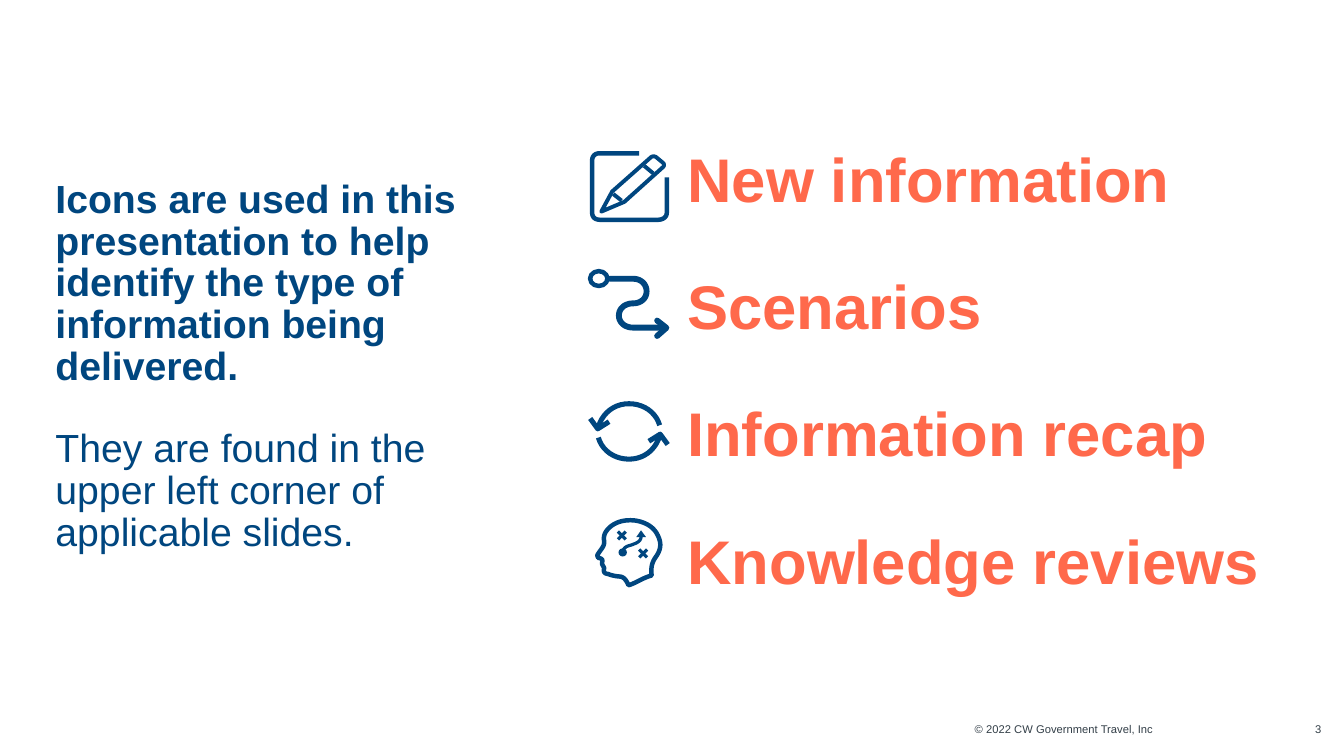
from lxml.etree import SubElement
from pptx import Presentation
from pptx.dml.color import RGBColor as RGB
from pptx.enum.shapes import MSO_SHAPE as SHAPE
from pptx.enum.text import MSO_ANCHOR as ANCHOR, PP_ALIGN as ALIGN
from pptx.oxml.ns import qn
from pptx.util import Pt

COLORS = {"navy": "00467F", "coral": "FF694B", "slate": "333F48"}
FONT = "Arial"
CURVE_STEPS = 10


def flatten(path):
    """Turn points (x, y) and cubic curves (x1, y1, x2, y2, x, y) into points."""
    points = [path[0]]
    for step in path[1:]:
        if len(step) == 2:
            points.append(step)
            continue
        start, controls = points[-1], (step[:2], step[2:4], step[4:])
        for i in range(1, CURVE_STEPS + 1):
            t = i / CURVE_STEPS
            weights = ((1 - t) ** 3, 3 * t * (1 - t) ** 2, 3 * t * t * (1 - t), t ** 3)
            points.append(tuple(
                sum(w * p[axis] for w, p in zip(weights, (start, *controls)))
                for axis in (0, 1)))
    return points


class SlideBuilder:
    def __init__(self, deck):
        self.slide = deck.slides.add_slide(deck.slide_layouts[6])
        self.shapes = self.slide.shapes

    def color(self, name):
        return RGB.from_string(COLORS[name])

    def text(self, box, paragraphs, size, color, anchor=ANCHOR.TOP, **spacing):
        """Each paragraph is (text, bold, space before)."""
        frame = self.shapes.add_textbox(*map(Pt, box)).text_frame
        frame_format = {"word_wrap": True, "vertical_anchor": anchor,
                        "margin_left": 0, "margin_top": 0,
                        "margin_right": 0, "margin_bottom": 0}
        for key, value in frame_format.items():
            setattr(frame, key, value)
        for i, (words, bold, before) in enumerate(paragraphs):
            paragraph = frame.add_paragraph() if i else frame.paragraphs[0]
            for key, value in {**spacing, "space_before": Pt(before)}.items():
                setattr(paragraph, key, value)
            run = paragraph.add_run()
            run.text = words
            for key, value in {"name": FONT, "size": Pt(size), "bold": bold}.items():
                setattr(run.font, key, value)
            run.font.color.rgb = self.color(color)

    def paint(self, shape, width, filled):
        shape.shadow.inherit = False
        if filled:
            shape.fill.solid()
            shape.fill.fore_color.rgb = self.color("navy")
        else:
            shape.fill.background()
        if width:
            shape.line.color.rgb = self.color("navy")
            shape.line.width = Pt(width)
            line = shape.line._get_or_add_ln()
            line.set("cap", "flat" if width < 4 else "rnd")
            SubElement(line, qn("a:round"))
        else:
            shape.line.fill.background()

    def outline(self, path, width=0, closed=False, filled=False):
        points = [(Pt(x), Pt(y)) for x, y in flatten(path)]
        builder = self.shapes.build_freeform(*points[0], scale=1.0)
        builder.add_line_segments(points[1:], close=closed)
        self.paint(builder.convert_to_shape(), width, filled)

    def oval(self, box, width=0, filled=False):
        self.paint(self.shapes.add_shape(SHAPE.OVAL, *map(Pt, box)), width, filled)


def draw_pencil(page):
    frame = [(456.5, 109.5), (428.4, 109.5), (425, 109.5, 423, 111.6, 423, 114.5),
             (423, 152), (423, 155, 425, 157, 428.4, 157), (470.2, 157),
             (473.6, 157, 476.3, 155, 476.3, 152), (476.3, 126.7)]
    pencil = [(429.5, 151.2), (437.3, 136.8), (464.8, 112.5),
              (466.2, 111.4, 467.6, 111.4, 469, 112.5), (473.6, 116.3),
              (474.6, 117.3, 474.6, 118.4, 473.6, 119.4), (446, 144.2)]
    page.outline(frame, 3.2)
    page.outline(pencil, 2.8, closed=True)
    for band in ([(460.1, 118.4), (466.6, 123.8)], [(438.1, 138.6), (444, 143.3)]):
        page.outline(band, 2.8)


def draw_route(page):
    page.oval((421.5, 193.7, 12.4, 10.6), 3.2)
    page.outline([(435.6, 199.1), (452.2, 199.1),
                  (457.9, 199.1, 461.9, 203, 461.9, 208.1),
                  (461.9, 213.1, 457.9, 216.7, 452.2, 216.7),
                  (446.4, 216.7, 442.1, 220.3, 442.1, 225.4),
                  (442.1, 230.4, 446.4, 234, 452.2, 234), (475, 234)], 4.2)
    page.outline([(469.4, 229), (476, 234.2), (469.4, 240)], 4.2)


def draw_cycle(page):
    arc = [(427.3, 305.3), (430.5, 294.5, 439.2, 288.4, 449.3, 288.4),
           (459.7, 288.4, 468.5, 294.5, 471.2, 303.8)]
    arrowhead = [(421.6, 298.9), (427, 306.3), (435.1, 301.2)]
    center = (449.3, 308.2)
    for path in (arc, arrowhead):
        # The lower arrow is the upper one turned by half a circle
        turned = [tuple(2 * center[i % 2] - v for i, v in enumerate(step))
                  for step in path]
        for half in (path, turned):
            page.outline(half, 3.6)


def draw_head(page):
    page.outline([(465.5, 411.1), (464.8, 405.4, 465.8, 401.8, 468, 398.5),
                  (471.6, 393.8, 472.3, 389.5, 471.2, 385.9),
                  (469.4, 379.4, 465.1, 375.1, 458.6, 373),
                  (454.3, 371.5, 449.3, 371.2, 444.6, 372.2),
                  (440.6, 373, 437, 375.1, 434.9, 377.3),
                  (432, 380.2, 430.9, 383, 431.6, 386.6),
                  (432, 390.2, 429.1, 392.4, 426.6, 396.7), (427.3, 398.5),
                  (429.8, 398.9, 430.6, 399.6, 430.2, 401.4), (430.2, 403.2),
                  (431.6, 405.7), (430.9, 409, 432, 409.7, 434.2, 410),
                  (437, 411.1, 439.2, 411.5, 442.1, 411.8),
                  (445.7, 411.8, 447.5, 414.7, 448.9, 418),
                  (452.2, 417.6, 459.4, 412.6, 465.5, 411.1)], 3.2, closed=True)
    # Game plan inside the head
    arm = 2.8
    for x, y in ((444.2, 382.5), (459.4, 395.3)):
        for slope in (-1, 1):
            page.outline([(x - arm, y - slope * arm), (x + arm, y + slope * arm)], 2.3)
    page.oval((441.8, 391.7, 6, 5.8), filled=True)
    page.outline([(445.3, 392.8), (447, 389.6, 450, 390, 452.9, 388.6),
                  (456, 387.4, 458, 386, 458, 383)], 2.3)
    page.outline([(454.5, 383.6), (457.9, 378.8), (461.4, 383.6)],
                 closed=True, filled=True)


def main():
    deck = Presentation()
    deck.slide_width, deck.slide_height = Pt(960), Pt(540)
    page = SlideBuilder(deck)

    # Footer
    for box, words in (((603.7, 516.2, 220, 10), "© 2022 CW Government Travel, Inc"),
                       ((927.4, 516.2, 16.5, 10), "3")):
        page.text(box, [(words, False, 0)], 8, "slate", alignment=ALIGN.RIGHT)

    # Explanation
    page.text((39.6, 51, 289.5, 422.6), [
        ("Icons are used in this presentation to help identify the type of "
         "information being delivered.", True, 0),
        ("They are found in the upper left corner of applicable slides.", False, 28.5),
    ], 28, "navy", ANCHOR.MIDDLE, line_spacing=0.89)

    # Icon meanings
    meanings = ("New information", "Scenarios", "Information recap", "Knowledge reviews")
    page.text((491, 51, 429, 422.6),
              [(words, True, 12 if i else 0) for i, words in enumerate(meanings)],
              44, "coral", ANCHOR.MIDDLE, space_after=Pt(24), line_spacing=1.04)

    # Icons
    for draw in (draw_pencil, draw_route, draw_cycle, draw_head):
        draw(page)

    deck.save("out.pptx")


if __name__ == "__main__":
    main()
